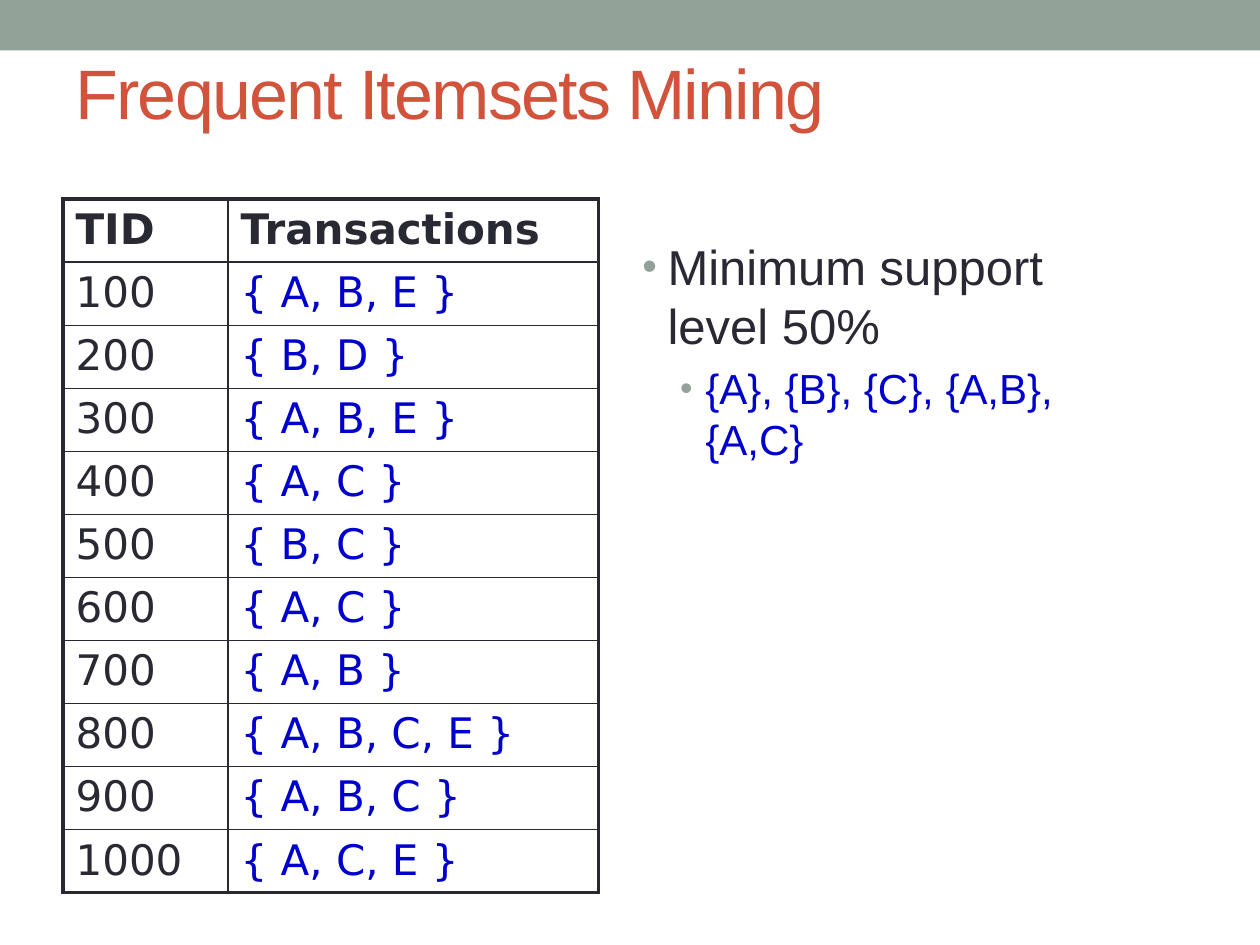
from lxml import etree
from pptx import Presentation
from pptx.dml.color import RGBColor
from pptx.enum import shapes, text
from pptx.oxml.ns import qn
from pptx.util import Pt

SAGE, RED, INK, BLUE = "93A299", "D2533C", "292934", "0000CC"
THIN, THICK = 1, 2.25
TRANSACTIONS = ["A, B, E", "B, D", "A, B, E", "A, C", "B, C",
                "A, C", "A, B", "A, B, C, E", "A, B, C", "A, C, E"]


def color(hex_code):
    return RGBColor.from_string(hex_code)


def add_xml(parent, tag, **attributes):
    return etree.SubElement(parent, qn(tag), attributes)


def add_run(paragraph, words, size, hex_code, font="Arial", bold=False):
    run = paragraph.add_run()
    run.text = words
    run.font.name = font
    run.font.size = Pt(size)
    run.font.bold = bold
    run.font.color.rgb = color(hex_code)
    return run


def space_before(paragraph):
    """Put a fifth of a line above the paragraph; return its properties."""
    properties = paragraph._p.get_or_add_pPr()
    add_xml(add_xml(properties, "a:spcBef"), "a:spcPct", val="20000")
    return properties


def add_text_frame(slide, left, top, width, height):
    box = slide.shapes.add_textbox(Pt(left), Pt(top), Pt(width), Pt(height))
    box.text_frame.word_wrap = True
    return box.text_frame


def add_banner(slide):
    banner = slide.shapes.add_shape(
        shapes.MSO_SHAPE.RECTANGLE, 0, 0, Pt(720), Pt(28.8))
    banner.shadow.inherit = False
    banner.fill.solid()
    banner.fill.fore_color.rgb = color(SAGE)
    banner.line.fill.background()


def add_title(slide, words):
    frame = add_text_frame(slide, 36, 21.6, 648, 61.9)
    frame.vertical_anchor = text.MSO_ANCHOR.MIDDLE
    run = add_run(frame.paragraphs[0], words, 40, RED)
    run._r.get_or_add_rPr().set("spc", "-100")


def add_bullet(paragraph, words, level, indent, size, hex_code):
    paragraph.level = level
    properties = space_before(paragraph)
    properties.set("marL", str(Pt(indent)))
    properties.set("indent", str(-Pt(14.4)))
    add_xml(add_xml(properties, "a:buClr"), "a:srgbClr", val=SAGE)
    add_xml(properties, "a:buSzPct", val="85000")
    add_xml(properties, "a:buFont", typeface="Arial")
    add_xml(properties, "a:buChar", char="•")
    add_run(paragraph, words, size, hex_code)


def set_borders(cell, widths):
    """Draw the left, right, top and bottom borders, in that order."""
    properties = cell._tc.get_or_add_tcPr()
    for side, width in zip("LRTB", widths):
        line = etree.Element(qn(f"a:ln{side}"), w=str(Pt(width)))
        add_xml(add_xml(line, "a:solidFill"), "a:srgbClr", val=INK)
        properties.insert("LRTB".index(side), line)


def add_transaction_table(slide):
    rows = [("TID", "Transactions")]
    rows += [(str(100 * number), f"{{ {items} }}")
             for number, items in enumerate(TRANSACTIONS, 1)]
    frame = slide.shapes.add_table(
        len(rows), 2, Pt(36), Pt(113.8), Pt(306), Pt(396))
    table = frame.table
    table.first_row = table.horz_banding = False
    for column, width in zip(table.columns, (94.3, 211.7)):
        column.width = Pt(width)
    last = len(rows) - 1
    for r, row in enumerate(rows):
        table.rows[r].height = Pt(31.6)
        for c, words in enumerate(row):
            cell = table.cell(r, c)
            cell.fill.background()
            edges = (c == 0, c == 1, r == 0, r == last)
            set_borders(cell, [THICK if edge else THIN for edge in edges])
            paragraph = cell.text_frame.paragraphs[0]
            space_before(paragraph)
            add_run(paragraph, words, 24, BLUE if r and c else INK,
                    "DejaVu Sans", bold=r == 0)
    frame.height = Pt(396)


def main():
    deck = Presentation()
    deck.slide_width, deck.slide_height = Pt(720), Pt(540)
    slide = deck.slides.add_slide(deck.slide_layouts[6])
    add_banner(slide)
    add_title(slide, "Frequent Itemsets Mining")
    add_transaction_table(slide)
    findings = add_text_frame(slide, 360, 131.8, 303.8, 360)
    add_bullet(findings.paragraphs[0], "Minimum support level 50%",
               0, 14.4, 28, INK)
    add_bullet(findings.add_paragraph(), "{A}, {B}, {C}, {A,B}, {A,C}",
               1, 36, 24, BLUE)
    deck.save("out.pptx")


if __name__ == "__main__":
    main()
